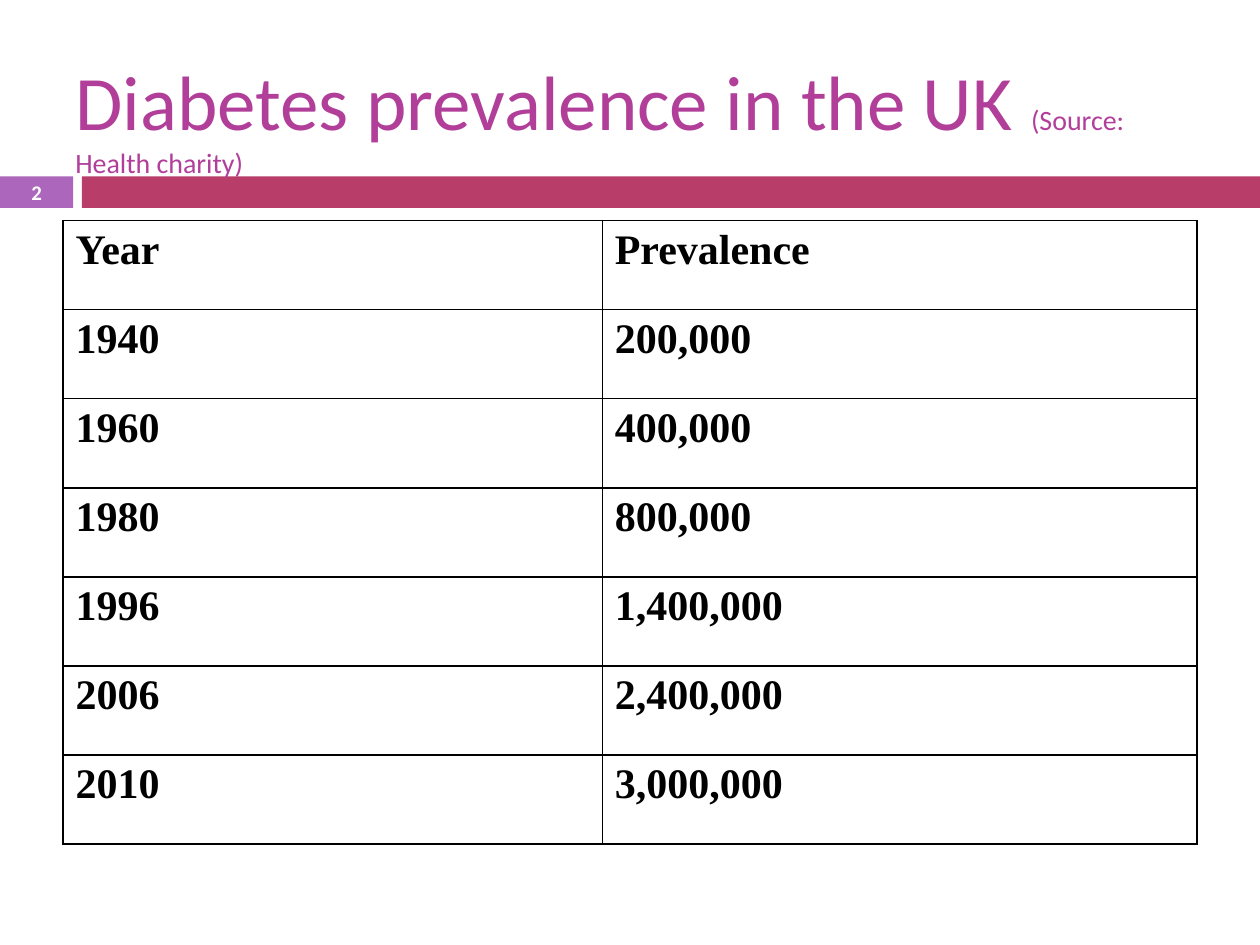
from lxml.etree import SubElement
from pptx import Presentation
from pptx.dml.color import RGBColor
from pptx.enum.shapes import MSO_SHAPE
from pptx.enum.text import MSO_ANCHOR, PP_ALIGN
from pptx.oxml.ns import qn
from pptx.util import Inches, Pt

# Content
TITLE = "Diabetes prevalence in the UK "
SOURCE = "(Source: Health charity)"
PAGE_NUMBER = "2"
ROWS = [
    ("Year", "Prevalence"),
    ("1940", "200,000"),
    ("1960", "400,000"),
    ("1980", "800,000"),
    ("1996", "1,400,000"),
    ("2006", "2,400,000"),
    ("2010", "3,000,000"),
]

# Formats
PURPLE = RGBColor(0xAC, 0x66, 0xBB)
CRIMSON = RGBColor(0xB8, 0x3D, 0x68)
MAGENTA = RGBColor(0xB1, 0x3F, 0x9A)
WHITE = RGBColor(0xFF, 0xFF, 0xFF)
BLACK = RGBColor(0x00, 0x00, 0x00)
TITLE_FONT = {"name": "Calibri", "size": Pt(44), "color": MAGENTA}
SOURCE_FONT = {**TITLE_FONT, "size": Pt(16)}
NUMBER_FONT = {"name": "Calibri", "size": Pt(11.9), "bold": True, "color": WHITE}
TABLE_FONT = {"name": "Times New Roman", "size": Pt(24), "bold": True, "color": BLACK}

# Layout
BANDS = [((0, 1.4, 0.58, 0.25), PURPLE), ((0.65, 1.4, 9.35, 0.25), CRIMSON)]
NUMBER_BOX = (0, 1.39, 0.58, 0.27)
TITLE_BOX = (0.5, 0.3, 9, 1.25)
TABLE_BOX = (0.5, 1.75, 9, 4.95)
COLUMN_WIDTHS = (4.28, 4.72)


def inches(box):
    return [Inches(length) for length in box]


def add_run(paragraph, text, formats):
    run = paragraph.add_run()
    run.text = text
    for name, value in formats.items():
        if name == "color":
            run.font.color.rgb = value
        else:
            setattr(run.font, name, value)


def add_text(slide, box, runs, alignment):
    shape = slide.shapes.add_textbox(*inches(box))
    frame = shape.text_frame
    frame.word_wrap = True
    frame.vertical_anchor = MSO_ANCHOR.MIDDLE
    paragraph = frame.paragraphs[0]
    paragraph.alignment = alignment
    for text, formats in runs:
        add_run(paragraph, text, formats)
    return shape


def add_borders(cell):
    properties = cell._tc.get_or_add_tcPr()
    for position, side in enumerate(("a:lnL", "a:lnR", "a:lnT", "a:lnB")):
        line = SubElement(properties, qn(side), w=str(Pt(1)))
        fill = SubElement(line, qn("a:solidFill"))
        SubElement(fill, qn("a:srgbClr"), val=str(BLACK))
        properties.insert(position, line)  # borders precede the fill


def add_table(slide):
    table = slide.shapes.add_table(len(ROWS), len(COLUMN_WIDTHS), *inches(TABLE_BOX)).table
    for column, width in zip(table.columns, COLUMN_WIDTHS):
        column.width = Inches(width)
    for row, values in zip(table.rows, ROWS):
        row.height = Inches(TABLE_BOX[3] / len(ROWS))
        for cell, value in zip(row.cells, values):
            cell.fill.background()
            add_borders(cell)
            add_run(cell.text_frame.paragraphs[0], value, TABLE_FONT)


def main():
    presentation = Presentation()
    presentation.slide_width, presentation.slide_height = Inches(10), Inches(7.5)
    slide = presentation.slides.add_slide(presentation.slide_layouts[6])

    # Coloured bands
    for box, color in BANDS:
        band = slide.shapes.add_shape(MSO_SHAPE.RECTANGLE, *inches(box))
        band.shadow.inherit = False
        band.fill.solid()
        band.fill.fore_color.rgb = color
        band.line.fill.background()

    # Page number and title
    number = add_text(slide, NUMBER_BOX, [(PAGE_NUMBER, NUMBER_FONT)], PP_ALIGN.CENTER)
    number.text_frame.margin_top = number.text_frame.margin_bottom = 0
    add_text(slide, TITLE_BOX, [(TITLE, TITLE_FONT), (SOURCE, SOURCE_FONT)], PP_ALIGN.LEFT)

    # Prevalence by year
    add_table(slide)
    presentation.save("out.pptx")


if __name__ == "__main__":
    main()
